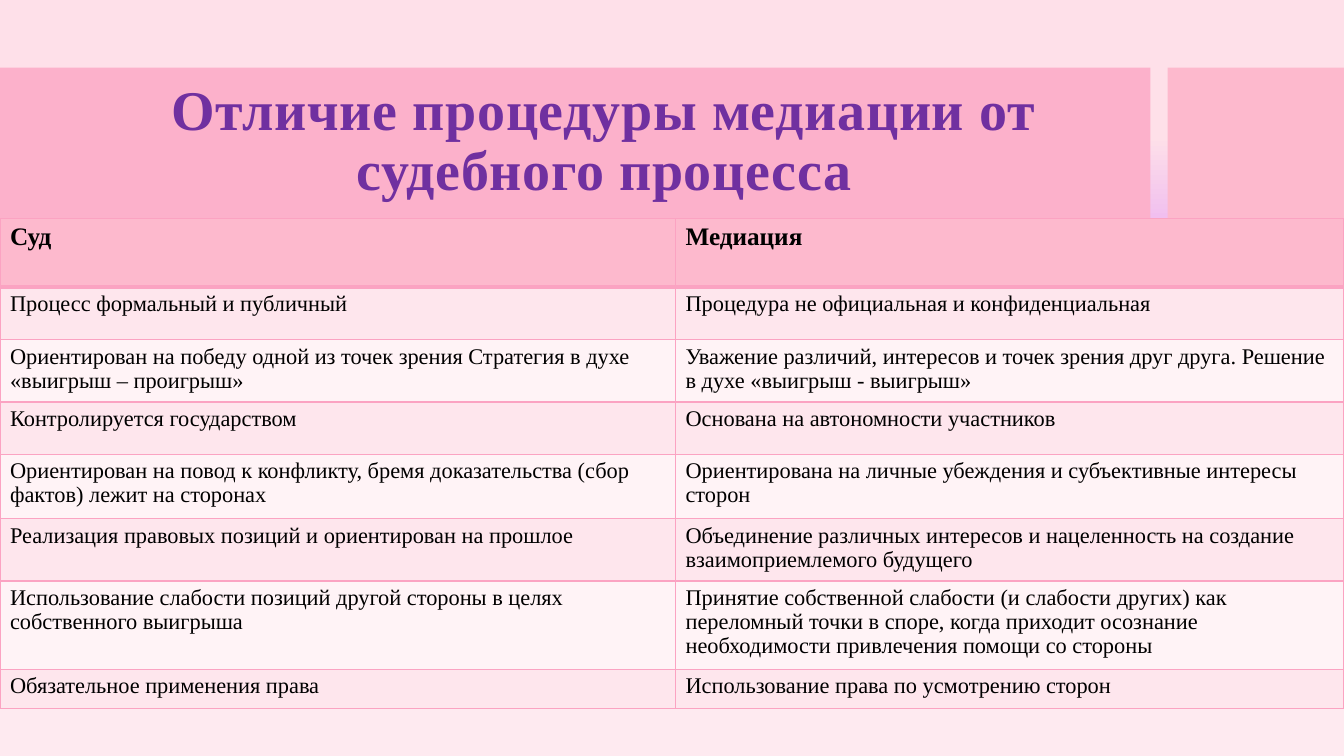
from lxml.etree import SubElement
from pptx import Presentation
from pptx.dml.color import RGBColor
from pptx.enum.shapes import MSO_SHAPE
from pptx.enum.text import MSO_ANCHOR, PP_ALIGN
from pptx.oxml.ns import qn
from pptx.util import Inches, Pt

COLORS = {
    "title band": "FCB1CB", "side band": "FDB9CD", "title": "7030A0",
    "header": "FDB9CD", "odd row": "FEE6ED", "even row": "FFF3F6",
    "border": "FBA3C2", "text": "000000",
}
BACKGROUND_STOPS = [(18, "FEE0E9"), (57, "CC66FF"), (79, "FEE0E9"), (82, "FEEAF0")]
ROWS = [
    (0.68, "Суд", "Медиация"),
    (0.52, "Процесс формальный и публичный",
     "Процедура не официальная и конфиденциальная"),
    (0.6, "Ориентирован на победу одной из точек зрения Стратегия в духе «выигрыш – проигрыш»",
     "Уважение различий, интересов и точек зрения друг друга. Решение в духе «выигрыш - выигрыш»"),
    (0.52, "Контролируется государством", "Основана на автономности участников"),
    (0.64, "Ориентирован на повод к конфликту, бремя доказательства (сбор фактов) лежит на сторонах",
     "Ориентирована на личные убеждения и субъективные интересы сторон"),
    (0.59, "Реализация правовых позиций и ориентирован на прошлое",
     "Объединение различных интересов и нацеленность на создание взаимоприемлемого будущего"),
    (0.84, "Использование слабости позиций другой стороны в целях собственного выигрыша",
     "Принятие собственной слабости (и слабости других) как переломный точки в споре, "
     "когда приходит осознание необходимости привлечения помощи со стороны"),
    (0.39, "Обязательное применения права", "Использование права по усмотрению сторон"),
]


def write(para, text, size, color, bold):
    span = para.add_run()
    span.text = text
    font_format = {"name": "Times New Roman", "size": Pt(size), "bold": bold}
    for name, value in font_format.items():
        setattr(span.font, name, value)
    span.font.color.rgb = RGBColor.from_string(COLORS[color])
    return span


def add_borders(cell, widths):
    """Draw the cell's sides; a cell's lines must come before its fill."""
    properties = cell._tc.get_or_add_tcPr()
    for side, width in widths.items():
        line = SubElement(properties, qn(f"a:{side}"), w=str(Pt(width)))
        fill = SubElement(line, qn("a:solidFill"))
        SubElement(fill, qn("a:srgbClr"), val=COLORS["border"])


deck = Presentation()
deck.slide_width, deck.slide_height = Inches(13.33), Inches(7.5)
page = deck.slides.add_slide(deck.slide_layouts[6])

# Background gradient, running from top to bottom
background = page.background.fill
background.gradient()
background.gradient_angle = 270
stops = page.element.find(".//" + qn("a:gsLst"))
for stop in list(stops):
    stops.remove(stop)
for percent, color in BACKGROUND_STOPS:
    stop = SubElement(stops, qn("a:gs"), pos=str(percent * 1000))
    SubElement(stop, qn("a:srgbClr"), val=color)

# Bands behind the title
for left, width, color in [(0, 11.41, "title band"), (11.58, 1.75, "side band")]:
    band = page.shapes.add_shape(
        MSO_SHAPE.RECTANGLE, Inches(left), Inches(0.67), Inches(width), Inches(1.5))
    band.shadow.inherit = False
    band.fill.solid()
    band.fill.fore_color.rgb = RGBColor.from_string(COLORS[color])
    band.line.fill.background()

# Title
title_box = page.shapes.add_textbox(Inches(0.74), Inches(0.82), Inches(10.51), Inches(1.18))
title_frame = title_box.text_frame
title_frame.word_wrap = True
title_frame.vertical_anchor = MSO_ANCHOR.MIDDLE
title_para = title_frame.paragraphs[0]
title_para.alignment = PP_ALIGN.CENTER
title_para.line_spacing = 0.9
title_span = write(title_para, "Отличие процедуры медиации от судебного процесса", 40, "title", True)
title_span.font._element.set("spc", "50")

# Comparison table
table_height = sum(row[0] for row in ROWS)
table = page.shapes.add_table(
    len(ROWS), 2, 0, Inches(2.17), Inches(13.33), Inches(table_height)).table
for column, width in zip(table.columns, (6.7, 6.63)):
    column.width = Inches(width)
for row_index, (height, *texts) in enumerate(ROWS):
    table.rows[row_index].height = Inches(height)
    is_header = row_index == 0
    fill_color = "header" if is_header else "odd row" if row_index % 2 else "even row"
    widths = {"lnL": 1, "lnR": 1, "lnT": 3 if row_index == 1 else 1, "lnB": 3 if is_header else 1}
    for column_index, text in enumerate(texts):
        cell = table.cell(row_index, column_index)
        add_borders(cell, widths)
        cell.fill.solid()
        cell.fill.fore_color.rgb = RGBColor.from_string(COLORS[fill_color])
        para = cell.text_frame.paragraphs[0]
        para.line_spacing = 0.97
        write(para, text, 18 if is_header else 16, "text", is_header)

deck.save("out.pptx")
